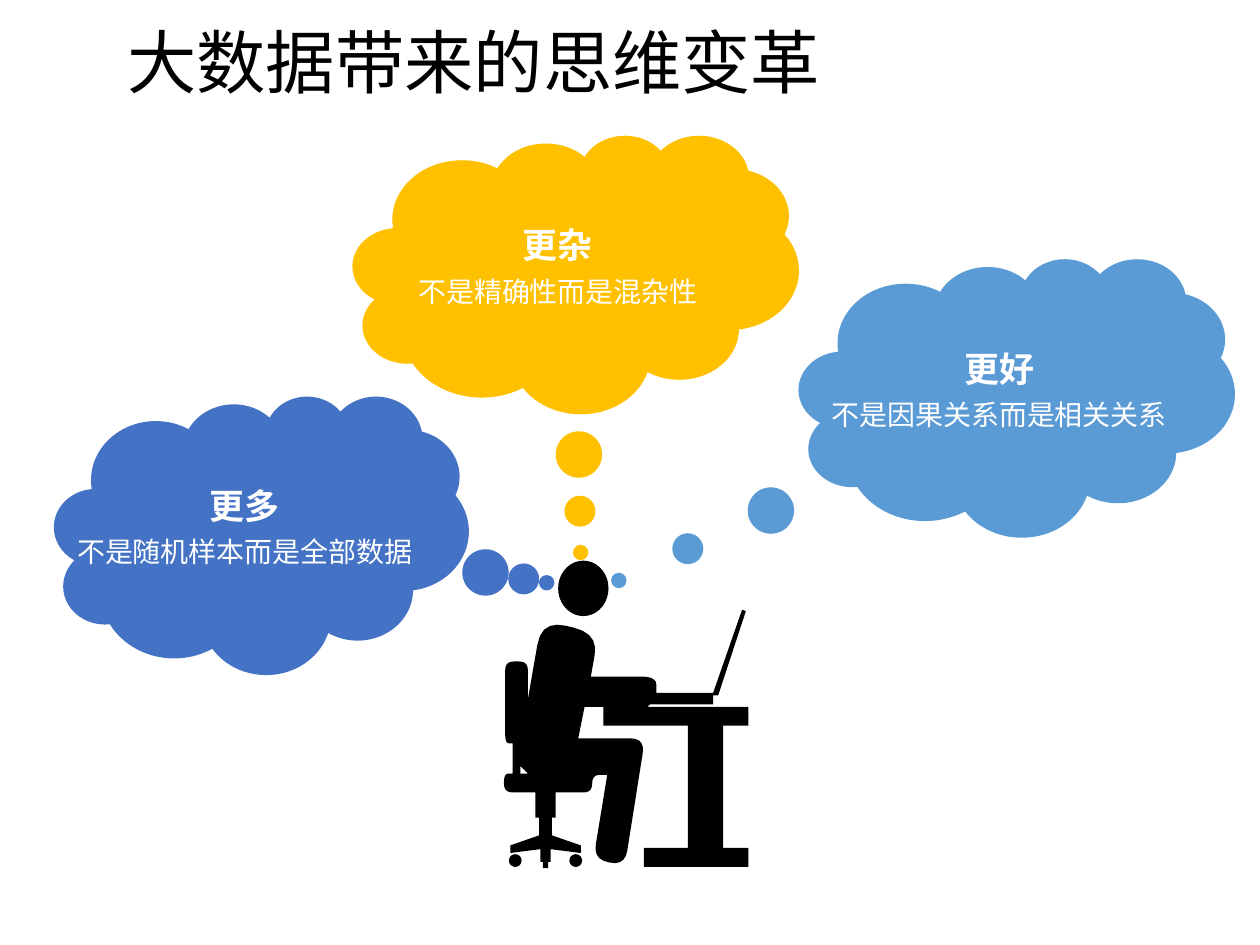
"""Build a slide on how big data changes thinking: three thought clouds above a person at a desk."""
import math

from lxml import etree
from pptx import Presentation
from pptx import util as u
from pptx.dml.color import RGBColor
from pptx.enum import shapes, text
from pptx.oxml.ns import qn

FONT = "Noto Sans CJK SC"


def paint(fill, color):
    fill.solid()
    fill.fore_color.rgb = RGBColor.from_string(color)


def format_span(span, size, color, bold=None):
    span.font.name = FONT
    span.font.size = u.Pt(size)
    span.font.bold = bold
    paint(span.font.fill, color)
    etree.SubElement(span._r.get_or_add_rPr(), qn("a:ea"), typeface=FONT)


deck = Presentation()
deck.slide_width, deck.slide_height = u.Inches(10), u.Inches(7.5)
page = deck.slides.add_slide(deck.slide_layouts[5])

title = page.shapes.title
title.left, title.top, title.width, title.height = map(u.Inches, (0.91, 0.25, 8.67, 0.55))
title.text_frame.text = "大数据带来的思维变革"
title.text_frame.vertical_anchor = text.MSO_ANCHOR.MIDDLE
title.text_frame.word_wrap = True
para = title.text_frame.paragraphs[0]
para.alignment = text.PP_ALIGN.LEFT
para.line_spacing = 0.9
format_span(para.runs[0], 39.6, "000000")

thoughts = [
    ("更好", "不是因果关系而是相关关系", "5B9BD5", (6.34, 2.05, 3.46, 2.21), (-0.913, 0.657), False),
    ("更多", "不是随机样本而是全部数据", "4472C4", (0.43, 3.14, 3.29, 2.21), (0.688, 0.172), False),
    ("更杂", "不是精确性而是混杂性", "FFC000", (2.8, 1.07, 3.54, 2.21), (0.011, 1), True),
]
for heading, detail, color, place, tail, wrap in thoughts:
    cloud = page.shapes.add_shape(shapes.MSO_SHAPE.CLOUD_CALLOUT, *map(u.Inches, place))
    cloud.adjustments[0], cloud.adjustments[1] = tail
    cloud.shadow.inherit = False
    paint(cloud.fill, color)
    cloud.line.fill.background()
    frame = cloud.text_frame
    frame.margin_left, frame.margin_top = 0, u.Inches(0.03)
    frame.margin_right, frame.margin_bottom = u.Inches(0.03), u.Inches(0.06)
    frame.vertical_anchor = text.MSO_ANCHOR.MIDDLE
    frame.word_wrap = wrap
    frame.text = f"{heading}\n{detail}"
    for para, size, bold in zip(frame.paragraphs, (20, 16), (True, False)):
        para.alignment = text.PP_ALIGN.CENTER
        para.line_spacing = u.Pt(24)
        format_span(para.runs[0], size, "FFFFFF", bold)

AXIS, SEAT, LIMB = 4.33, 0.07, 0.12
half_base = [
    (0.08, 6.29), (0.08, 6.49), (0.05, 6.49), (0.05, 6.63), (0.28, 6.71),
    (0.28, 6.77), (0.04, 6.74), (0.04, 6.84), (0.02, 6.84), (0.02, 6.89),
]
chair_base = [(AXIS - x, y, 0) for x, y in half_base]
chair_base += [(AXIS + x, y, 0) for x, y in reversed(half_base)]
sitter = [
    (4.7, 6.29, SEAT), (4.7, 6.15, SEAT), (4.82, 6.15, 0), (4.71, 6.82, LIMB),
    (4.96, 6.87, LIMB), (5.12, 5.86, LIMB), (4.59, 5.86, 0), (4.64, 5.61, 0),
    (5.14, 5.61, 0), (5.16, 5.59, 0), (5.66, 5.59, 0), (5.66, 5.52, 0), (5.7, 5.52, 0),
    (5.92, 4.85, 0), (5.89, 4.84, 0), (5.66, 5.5, 0), (5.21, 5.5, 0), (5.21, 5.37, LIMB),
    (4.69, 5.37, 0), (4.75, 5.03, 0.2), (4.3, 4.92, 0.2), (4.19, 5.55, 0),
    (4.19, 5.25, SEAT), (4.01, 5.25, SEAT), (4.01, 5.9, SEAT), (4.07, 5.9, 0),
    (4.07, 6.14, 0), (4, 6.14, SEAT), (4, 6.29, SEAT),
]
outline = []
corners = chair_base + sitter
for index, (x, y, radius) in enumerate(corners):
    if not radius:
        outline.append((x, y))
        continue
    ends = []
    for near_x, near_y, _ in (corners[index - 1], corners[(index + 1) % len(corners)]):
        share = min(radius / math.dist((x, y), (near_x, near_y)), 0.5)
        ends.append((x + share * (near_x - x), y + share * (near_y - y)))
    for t in (0, 0.2, 0.4, 0.6, 0.8, 1):
        a, b, c = (1 - t) ** 2, 2 * t * (1 - t), t * t
        outline.append(tuple(a * p + b * q + c * r for p, q, r in zip(ends[0], (x, y), ends[1])))

contours = [outline, [(4.13, 6.08), (4.19, 6.14), (4.13, 6.14)]]
for x, y, wide, high in ((4.63, 4.67, 0.2, 0.22), (4.09, 6.83, 0.05, 0.05), (4.57, 6.83, 0.05, 0.05)):
    angles = [math.radians(degrees) for degrees in range(0, 360, 10)]
    contours.append([(x + wide * math.cos(angle), y + high * math.sin(angle)) for angle in angles])
for left, top, right, bottom in ((4.79, 5.61, 5.94, 5.76), (5.46, 5.76, 5.74, 6.73), (5.11, 6.73, 5.94, 6.88)):
    contours.append([(left, top), (right, top), (right, bottom), (left, bottom)])

builder = page.shapes.build_freeform(*map(u.Inches, outline[0]))
for contour in contours:
    points = [(u.Inches(x), u.Inches(y)) for x, y in contour]
    if contour is not outline:
        builder.move_to(*points[0])
    builder.add_line_segments(points[1:], close=True)
person = builder.convert_to_shape()
person.shadow.inherit = False
paint(person.fill, "000000")
person.line.fill.background()
cloud._element.addprevious(person._element)

deck.save("out.pptx")
